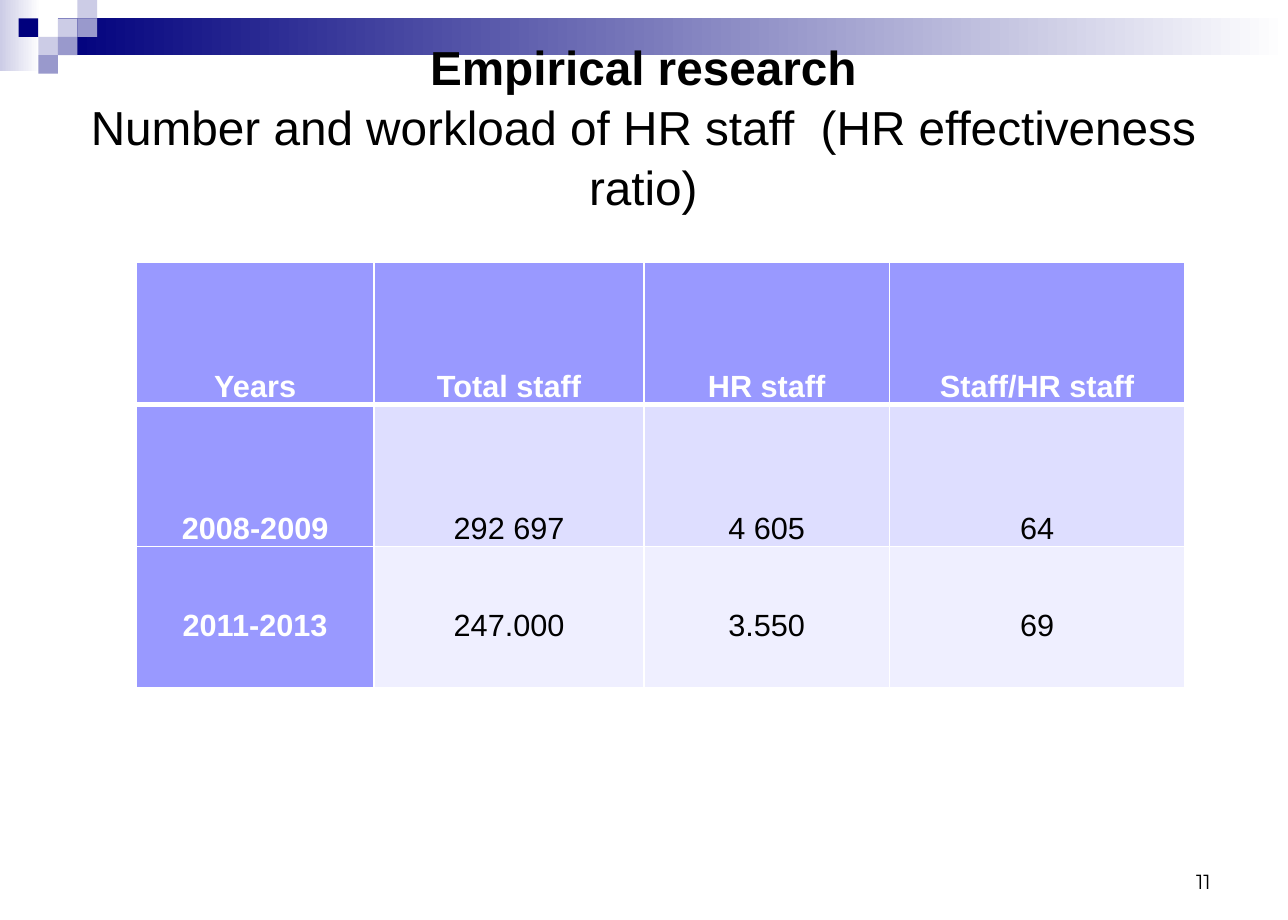
from dataclasses import dataclass

from lxml import etree
from pptx import Presentation
from pptx.dml.color import RGBColor
from pptx.enum.shapes import MSO_SHAPE
from pptx.enum.text import MSO_ANCHOR, MSO_AUTO_SIZE, PP_ALIGN
from pptx.oxml.ns import qn
from pptx.slide import Slide
from pptx.table import _Cell
from pptx.text.text import Font
from pptx.util import Pt

RECTANGLE = MSO_SHAPE.RECTANGLE
TOP, MIDDLE, BOTTOM = MSO_ANCHOR.TOP, MSO_ANCHOR.MIDDLE, MSO_ANCHOR.BOTTOM
CENTER, RIGHT = PP_ALIGN.CENTER, PP_ALIGN.RIGHT
NO_AUTOFIT = MSO_AUTO_SIZE.NONE
TITLE_ONLY = 5


@dataclass(frozen=True)
class Theme:
    navy: str = "00007D"
    slate: str = "9999CC"
    mist: str = "CCCCE6"
    white: str = "FFFFFF"
    black: str = "000000"
    header: str = "9999FF"
    first_band: str = "DEDEFF"
    second_band: str = "EFEFFF"
    body_font: str = "Arial"
    number_font: str = "Montserrat"
    title_size: float = 28
    table_size: float = 18
    number_size: float = 12


THEME = Theme()


@dataclass(frozen=True)
class Block:
    """A rectangle in points; with fade_to it runs from color to that colour."""
    left: float
    top: float
    width: float
    height: float
    color: str
    fade_to: str = ""


@dataclass(frozen=True)
class Row:
    values: tuple[str, ...]
    fill: str
    anchor: MSO_ANCHOR
    top_border: float
    bottom_border: float
    is_header: bool = False


TILE_LEFT, TILE_WIDTH, TILE_HEIGHT = 11, 11.5, 10.8


def tile(column: int, row: int, color: str) -> Block:
    """One square of the corner mosaic, placed on its grid."""
    return Block(TILE_LEFT + column * TILE_WIDTH, row * TILE_HEIGHT,
                 TILE_WIDTH, TILE_HEIGHT, color)


BANNER = (
    Block(0, 0, 23.8, 41.8, THEME.mist, THEME.white),
    Block(34, 10.8, 722, 21.6, THEME.navy, THEME.white),
    tile(2, 1, THEME.mist),
    tile(3, 0, THEME.mist),
    tile(3, 1, THEME.slate),
    tile(1, 2, THEME.mist),
    tile(0, 1, THEME.navy),
    tile(2, 2, THEME.slate),
    tile(1, 3, THEME.slate),
)

COLUMN_WIDTHS = (139.7, 158.4, 144, 173.5)
ROW_HEIGHT = 83.3
STAFF_ROWS = (
    Row(("Years", "Total staff", "HR staff", "Staff/HR staff"),
        THEME.header, BOTTOM, 1, 3, True),
    Row(("2008-2009", "292 697", "4 605", "64"),
        THEME.first_band, BOTTOM, 3, 1),
    Row(("2011-2013", "247.000", "3.550", "69"),
        THEME.second_band, MIDDLE, 1, 1),
)


def style_font(font: Font, name: str, size: float, color: str, bold: bool) -> None:
    font.name = name
    font.size = Pt(size)
    font.bold = bold
    font.color.rgb = RGBColor.from_string(color)


def draw_block(slide: Slide, block: Block) -> None:
    shape = slide.shapes.add_shape(RECTANGLE, Pt(block.left), Pt(block.top),
                                   Pt(block.width), Pt(block.height))
    shape.shadow.inherit = False
    shape.line.fill.background()
    if block.fade_to:
        shape.fill.gradient()
        shape.fill.gradient_angle = 0
        for stop, color in zip(shape.fill.gradient_stops,
                               (block.color, block.fade_to)):
            stop.color.rgb = RGBColor.from_string(color)
    else:
        shape.fill.solid()
        shape.fill.fore_color.rgb = RGBColor.from_string(block.color)


def write_title(slide: Slide) -> None:
    title = slide.shapes.title
    slide.shapes._spTree.append(title._element)  # in front of the banner
    title.left, title.top = Pt(37.4), Pt(36)
    title.width, title.height = Pt(680.4), Pt(108)
    frame = title.text_frame
    frame.text = ("Empirical research\v"
                  "Number and workload of HR staff  (HR effectiveness ratio)")
    frame.word_wrap = True
    frame.auto_size = NO_AUTOFIT
    frame.vertical_anchor = MIDDLE
    frame.margin_bottom = Pt(37)
    paragraph = frame.paragraphs[0]
    paragraph.alignment = CENTER
    paragraph.line_spacing = 1.05
    for run, bold in zip(paragraph.runs, (True, False)):
        style_font(run.font, THEME.body_font, THEME.title_size, THEME.black, bold)


def draw_borders(cell: _Cell, top: float, bottom: float) -> None:
    properties = cell._tc.get_or_add_tcPr()
    for side, width in (("lnL", 1), ("lnR", 1), ("lnT", top), ("lnB", bottom)):
        line = etree.SubElement(properties, qn(f"a:{side}"), w=str(Pt(width)))
        fill = etree.SubElement(line, qn("a:solidFill"))
        etree.SubElement(fill, qn("a:srgbClr"), val=THEME.white)


def fill_cell(cell: _Cell, text: str, row: Row, is_heading: bool) -> None:
    draw_borders(cell, row.top_border, row.bottom_border)
    cell.fill.solid()
    cell.fill.fore_color.rgb = RGBColor.from_string(
        THEME.header if is_heading else row.fill)
    cell.vertical_anchor = row.anchor
    cell.margin_left = cell.margin_right = Pt(5)
    cell.margin_top = cell.margin_bottom = Pt(0)
    paragraph = cell.text_frame.paragraphs[0]
    paragraph.text = text
    paragraph.alignment = CENTER
    paragraph.line_spacing = 1.5
    paragraph.space_before = Pt(9)
    style_font(paragraph.runs[0].font, THEME.body_font, THEME.table_size,
               THEME.white if is_heading else THEME.black, is_heading)


def draw_staff_table(slide: Slide) -> None:
    table = slide.shapes.add_table(
        len(STAFF_ROWS), len(COLUMN_WIDTHS), Pt(79.9), Pt(154.1),
        Pt(sum(COLUMN_WIDTHS)), Pt(ROW_HEIGHT * len(STAFF_ROWS))).table
    table.horz_banding = False
    table.first_col = True
    for column, width in zip(table.columns, COLUMN_WIDTHS):
        column.width = Pt(width)
    for row_index, row in enumerate(STAFF_ROWS):
        table.rows[row_index].height = Pt(ROW_HEIGHT)
        for column_index, text in enumerate(row.values):
            fill_cell(table.cell(row_index, column_index), text, row,
                      row.is_header or column_index == 0)


def write_page_number(slide: Slide) -> None:
    frame = slide.shapes.add_textbox(Pt(541.4), Pt(491.8),
                                     Pt(176.4), Pt(36)).text_frame
    frame.text = "11"
    frame.word_wrap = True
    frame.vertical_anchor = BOTTOM
    paragraph = frame.paragraphs[0]
    paragraph.alignment = RIGHT
    style_font(paragraph.runs[0].font, THEME.number_font, THEME.number_size,
               THEME.black, False)


def main() -> None:
    presentation = Presentation()
    presentation.slide_width, presentation.slide_height = Pt(756), Pt(540)
    slide = presentation.slides.add_slide(presentation.slide_layouts[TITLE_ONLY])
    for block in BANNER:
        draw_block(slide, block)
    write_title(slide)
    draw_staff_table(slide)
    write_page_number(slide)
    presentation.save("out.pptx")


if __name__ == "__main__":
    main()
